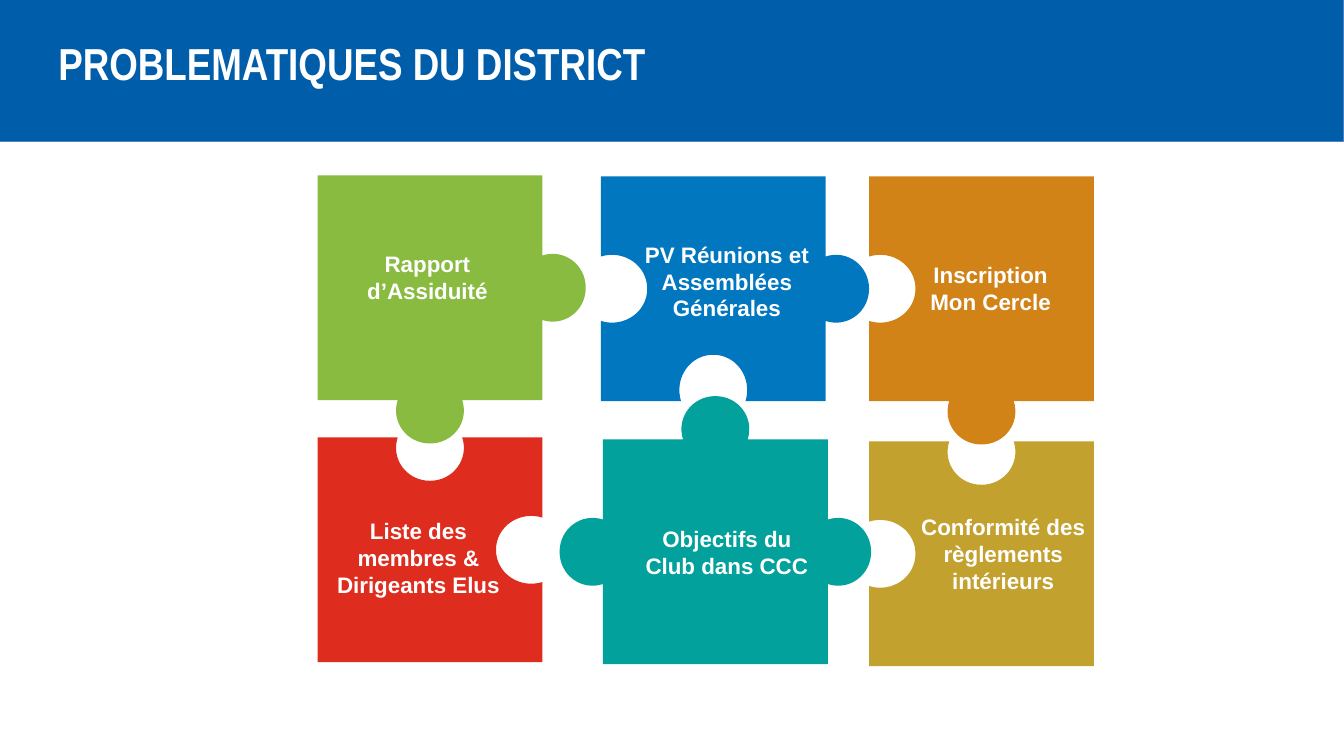
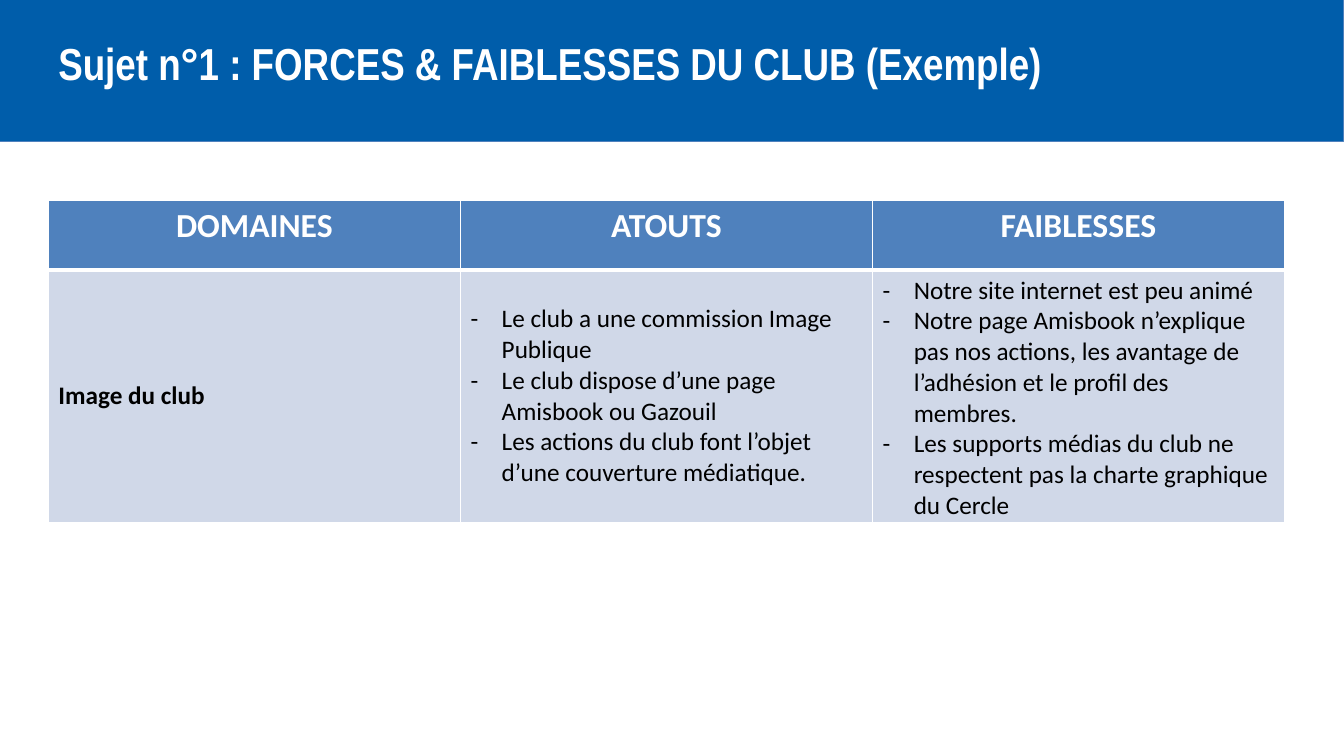
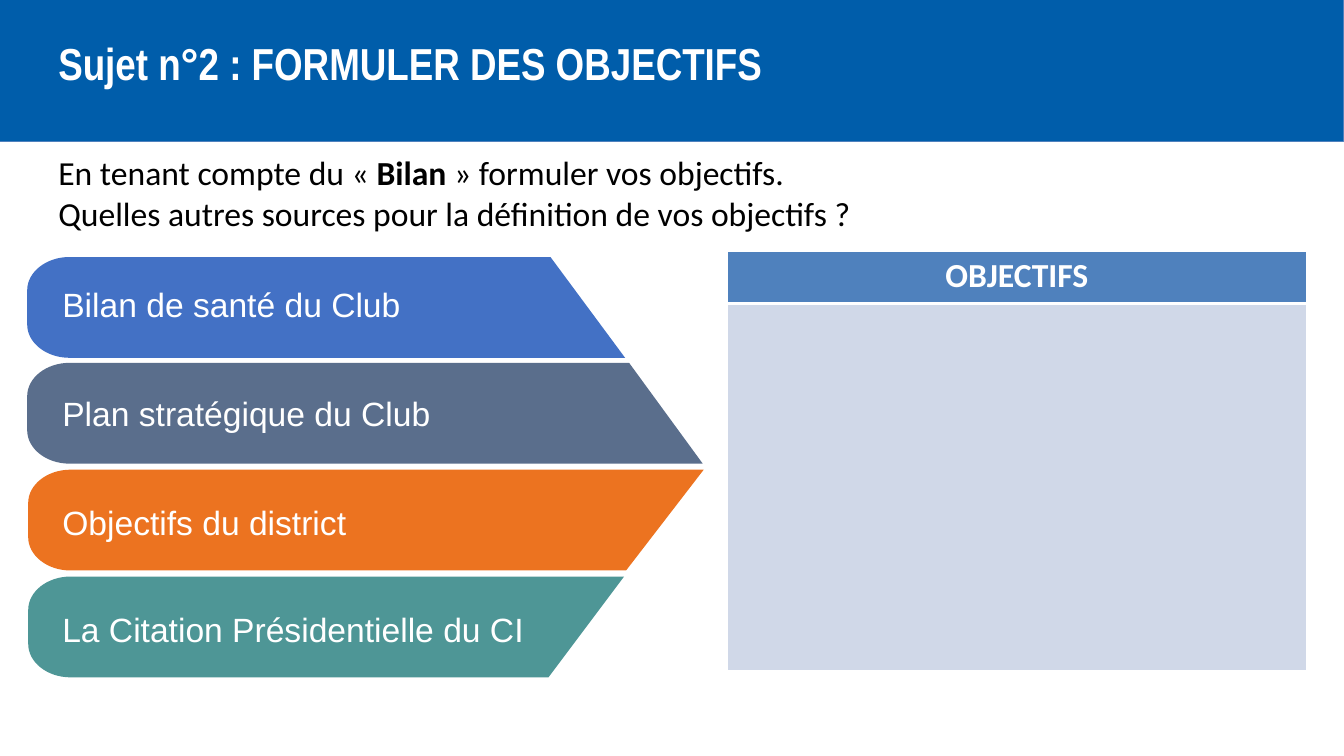
from lxml.etree import SubElement
from pptx import Presentation
from pptx.dml.color import RGBColor
from pptx.enum.shapes import MSO_SHAPE
from pptx.enum.text import MSO_ANCHOR, PP_ALIGN
from pptx.oxml.ns import qn
from pptx.util import Inches, Pt

WHITE = "FFFFFF"
BLACK = "000000"
BAND_BLUE = "005DAA"
TABLE_BLUE = "4F81BD"
TABLE_PALE = "D0D8E8"

PIECE_SIDE = 2.23
TAB, FLAT, SOCKET, SHALLOW_SOCKET = 0.43, 0, -0.46, -0.43

BAR_HEIGHT = 1
CORNER_WIDTH = 0.42
CORNER_HEIGHT = 0.33


def color(value):
    return RGBColor.from_string(value)


def format_runs(paragraph, size, font_name, text_color, bold=False):
    for run in paragraph.runs:
        run.font.size = Pt(size)
        run.font.name = font_name
        run.font.bold = bold
        run.font.color.rgb = color(text_color)


def add_text(slide, box, text, size, font_name, text_color, bold=False, alignment=PP_ALIGN.LEFT):
    shape = slide.shapes.add_textbox(*[Inches(length) for length in box])
    text_frame = shape.text_frame
    text_frame.word_wrap = True
    text_frame.text = text
    for paragraph in text_frame.paragraphs:
        paragraph.alignment = alignment
        format_runs(paragraph, size, font_name, text_color, bold)
    return text_frame


def add_titled_slide(presentation, title):
    slide = presentation.slides.add_slide(presentation.slide_layouts[6])
    band = slide.shapes.add_shape(
        MSO_SHAPE.RECTANGLE, 0, 0, presentation.slide_width, Inches(1.4)
    )
    band.shadow.inherit = False
    band.fill.solid()
    band.fill.fore_color.rgb = color(BAND_BLUE)
    band.line.color.rgb = color(TABLE_BLUE)
    band.line.width = Pt(0.75)
    text_frame = add_text(
        slide, (0.48, 0.41, 12.49, 0.49), title, 32, "Arial Narrow", WHITE, bold=True
    )
    text_frame.paragraphs[0].line_spacing = 0.8
    return slide


def add_outline(slide, segments, fill):
    points = [(Inches(x), Inches(y)) for segment in segments for x, y in segment]
    builder = slide.shapes.build_freeform(*points[0])
    builder.add_line_segments(points[1:], close=True)
    shape = builder.convert_to_shape()
    lines = list(shape._element.iter(qn("a:lnTo")))
    position = 0
    for segment in segments[1:]:
        if len(segment) == 3:
            curve = lines[position]
            curve.tag = qn("a:cubicBezTo")
            for line in lines[position + 1:position + 3]:
                curve.append(line[0])
                line.getparent().remove(line)
        position += len(segment)
    shape.shadow.inherit = False
    shape.fill.solid()
    shape.fill.fore_color.rgb = color(fill)
    shape.line.fill.background()


def knob_segments(depth):
    if depth == FLAT:
        return []
    return [
        [(-0.32, 0)],
        [(-0.39, depth / 2), (-0.23, depth), (0, depth)],
        [(0.23, depth), (0.39, depth / 2), (0.32, 0)],
    ]


def add_puzzle_piece(slide, left, top, fill, edges):
    half = PIECE_SIDE / 2
    segments = []
    for (normal_x, normal_y), depth in zip([(0, -1), (1, 0), (0, 1), (-1, 0)], edges):
        for segment in [[(-half, 0)]] + knob_segments(depth):
            segments.append([
                (
                    left + half - along * normal_y + (half + outward) * normal_x,
                    top + half + along * normal_x + (half + outward) * normal_y,
                )
                for along, outward in segment
            ])
    add_outline(slide, segments, fill)


def add_bar(slide, left, top, top_right, bottom_right, fill):
    bottom = top + BAR_HEIGHT
    inner = left + CORNER_WIDTH
    handle = left + CORNER_WIDTH * 0.45
    rise = CORNER_HEIGHT * 0.45
    segments = [
        [(inner, top)],
        [(top_right, top)],
        [(bottom_right, bottom)],
        [(inner, bottom)],
        [(handle, bottom), (left, bottom - rise), (left, bottom - CORNER_HEIGHT)],
        [(left, top + CORNER_HEIGHT)],
        [(left, top + rise), (handle, top), (inner, top)],
    ]
    add_outline(slide, segments, fill)


def set_borders(cell, bottom_width):
    properties = cell._tc.get_or_add_tcPr()
    sides = [("lnL", 1), ("lnR", 1), ("lnT", 1), ("lnB", bottom_width)]
    for position, (side, width) in enumerate(sides):
        border = SubElement(properties, qn(f"a:{side}"), w=str(Pt(width)))
        fill = SubElement(border, qn("a:solidFill"))
        SubElement(fill, qn("a:srgbClr"), val=WHITE)
        properties.insert(position, border)


def add_dash(paragraph):
    properties = paragraph._p.get_or_add_pPr()
    properties.set("marL", str(Inches(0.31)))
    properties.set("indent", str(-Inches(0.31)))
    SubElement(properties, qn("a:buFont"), typeface="Calibri")
    SubElement(properties, qn("a:buChar"), char="-")


def add_header_table(slide, left, top, width, row_heights, headers, contents):
    frame = slide.shapes.add_table(
        2, len(headers), Inches(left), Inches(top), Inches(width), Inches(sum(row_heights))
    )
    table = frame.table
    for row, height in zip(table.rows, row_heights):
        row.height = Inches(height)
    for index, (header, lines) in enumerate(zip(headers, contents)):
        header_cell, body_cell = table.cell(0, index), table.cell(1, index)
        for cell, fill, bottom_width in [(header_cell, TABLE_BLUE, 3), (body_cell, TABLE_PALE, 1)]:
            cell.fill.solid()
            cell.fill.fore_color.rgb = color(fill)
            set_borders(cell, bottom_width)
        header_cell.text_frame.text = header
        paragraph = header_cell.text_frame.paragraphs[0]
        paragraph.alignment = PP_ALIGN.CENTER
        format_runs(paragraph, 24, "Calibri", WHITE, bold=True)
        body_cell.vertical_anchor = MSO_ANCHOR.MIDDLE
        body_cell.text_frame.text = "\n".join(lines)
        is_list = len(lines) > 1
        for paragraph in body_cell.text_frame.paragraphs:
            if is_list:
                add_dash(paragraph)
            format_runs(paragraph, 18, "Calibri", BLACK, bold=not is_list)


def build_puzzle_slide(presentation):
    slide = add_titled_slide(presentation, "PROBLEMATIQUES DU DISTRICT")
    pieces = [
        (8.62, 1.75, "D28318", (FLAT, FLAT, TAB, SOCKET),
         "Inscription\nMon Cercle", (9.09, 2.54, 1.47, 0.64)),
        (5.96, 1.75, "0177BF", (FLAT, TAB, SOCKET, SOCKET),
         "PV Réunions et Assemblées Générales", (6.28, 2.34, 1.86, 0.91)),
        (3.15, 1.74, "89BB40", (FLAT, TAB, TAB, FLAT),
         "Rapport d’Assiduité", (3.31, 2.43, 1.86, 0.64)),
        (8.62, 4.38, "C2A12F", (SHALLOW_SOCKET, FLAT, FLAT, SOCKET),
         "Conformité des règlements intérieurs", (9.02, 5.04, 1.86, 0.91)),
        (5.98, 4.36, "02A19B", (TAB, TAB, FLAT, TAB),
         "Objectifs du Club dans CCC", (6.28, 5.16, 1.86, 0.64)),
        (3.15, 4.34, "DE2D1E", (SHALLOW_SOCKET, SOCKET, FLAT, FLAT),
         "Liste des membres & Dirigeants Elus", (3.22, 5.08, 1.86, 0.91)),
    ]
    for left, top, fill, edges, label, label_box in pieces:
        add_puzzle_piece(slide, left, top, fill, edges)
        add_text(slide, label_box, label, 16, "Arial", WHITE, True, PP_ALIGN.CENTER)


def build_strengths_slide(presentation):
    slide = add_titled_slide(
        presentation, "Sujet n°1 : FORCES & FAIBLESSES DU CLUB (Exemple)"
    )
    strengths = [
        "Le club a une commission Image Publique",
        "Le club dispose d’une page Amisbook ou Gazouil",
        "Les actions du club font l’objet d’une couverture médiatique.",
    ]
    weaknesses = [
        "Notre site internet est peu animé",
        "Notre page Amisbook n’explique pas nos actions, les avantage de l’adhésion"
        " et le profil des membres.",
        "Les supports médias du club ne respectent pas la charte graphique du Cercle",
    ]
    add_header_table(
        slide, 0.48, 1.99, 12.26, (0.69, 2.49),
        ["DOMAINES", "ATOUTS", "FAIBLESSES"],
        [["Image du club"], strengths, weaknesses],
    )


def build_objectives_slide(presentation):
    slide = add_titled_slide(presentation, "Sujet n°2 : FORMULER DES OBJECTIFS")
    text_frame = add_text(
        slide, (0.48, 1.46, 11.89, 1.31),
        "En tenant compte du « \nQuelles autres sources pour la définition de vos objectifs ?",
        24, "Calibri", BLACK,
    )
    paragraph = text_frame.paragraphs[0]
    for text in ("Bilan", " » formuler vos objectifs."):
        paragraph.add_run().text = text
    format_runs(paragraph, 24, "Calibri", BLACK)
    paragraph.runs[1].font.bold = True
    add_header_table(slide, 7.21, 2.49, 5.75, (0.52, 3.64), ["OBJECTIFS"], [[]])
    bars = [
        ("Bilan de santé du Club", "4371C5", 0.27, 2.55, 5.46, 6.2, 2.77),
        ("Plan stratégique du Club", "5A6E8C", 0.27, 3.6, 6.24, 6.97, 3.85),
        ("Objectifs du district", "EC7320", 0.28, 4.66, 6.98, 6.21, 4.93),
        ("La Citation Présidentielle du CI", "4E9696", 0.28, 5.72, 6.19, 5.44, 5.99),
    ]
    for label, fill, left, top, top_right, bottom_right, label_top in bars:
        add_bar(slide, left, top, top_right, bottom_right, fill)
        add_text(slide, (0.52, label_top, 4.94, 0.5), label, 24, "Arial", WHITE)


def main():
    presentation = Presentation()
    presentation.slide_width = Inches(13.33)
    presentation.slide_height = Inches(7.5)
    build_puzzle_slide(presentation)
    build_strengths_slide(presentation)
    build_objectives_slide(presentation)
    presentation.save("out.pptx")


if __name__ == "__main__":
    main()
